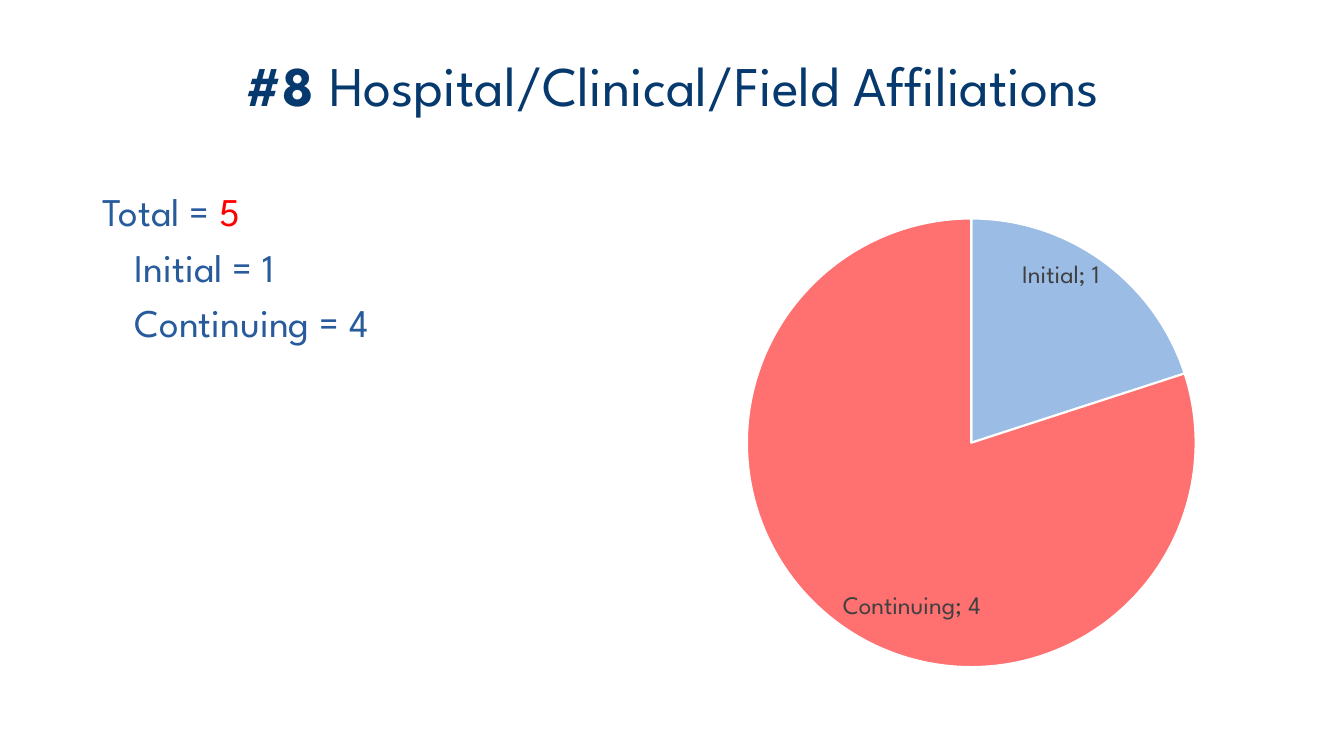
import pptx
import pptx.util
import pptx.chart.data
import pptx.dml.color
import pptx.enum.chart
import pptx.enum.text
import lxml.etree

Inches = pptx.util.Inches
Pt = pptx.util.Pt
FONT = "League Spartan"
COLORS = {"title": "06396D", "body": "285B9C", "total": "FF0000",
          "Initial": "9BBCE5", "Continuing": "FF7070",
          "label": "404040", "edge": "FFFFFF"}


def rgb(name):
    return pptx.dml.color.RGBColor.from_string(COLORS[name])


def add_run(p, text, size=28, color="body", bold=False):
    r = p.add_run()
    r.text = text
    r.font.name = FONT
    r.font.size = Pt(size)
    r.font.bold = bold
    r.font.color.rgb = rgb(color)


def add_text_frame(s, x, y, w, h):
    sp = s.shapes.add_textbox(Inches(x), Inches(y), Inches(w), Inches(h))
    tf = sp.text_frame
    tf.word_wrap = True
    return tf


def add_title(s, x, y, w, h):
    tf = add_text_frame(s, x, y, w, h)
    tf.vertical_anchor = pptx.enum.text.MSO_ANCHOR.MIDDLE
    p = tf.paragraphs[0]
    p.alignment = pptx.enum.text.PP_ALIGN.CENTER
    add_run(p, "#8 ", size=40, color="title", bold=True)
    add_run(p, "Hospital/Clinical/Field Affiliations", size=40, color="title")


def add_counts(s, x, y, w, h, counts):
    tf = add_text_frame(s, x, y, w, h)
    p = tf.paragraphs[0]
    p._p.get_or_add_pPr().set("marL", str(Inches(0.25)))
    add_run(p, "Total = ")
    add_run(p, str(sum(counts.values())), color="total")
    for name, value in counts.items():
        p = tf.add_paragraph()
        p._p.get_or_add_pPr().set("marL", str(Inches(0.57)))
        p.space_before = Pt(6)
        add_run(p, f"{name} = {value}")


def set_plot_layout(chart, **fractions):
    ns = "http://schemas.openxmlformats.org/drawingml/2006/chart"
    area = chart.plots[0]._element.getparent()
    for old in area.findall(f"{{{ns}}}layout"):
        area.remove(old)
    layout = lxml.etree.Element(f"{{{ns}}}layout")
    manual = lxml.etree.SubElement(layout, f"{{{ns}}}manualLayout")
    settings = {"layoutTarget": "inner", "xMode": "edge", "yMode": "edge", **fractions}
    for tag, value in settings.items():
        lxml.etree.SubElement(manual, f"{{{ns}}}{tag}").set("val", str(value))
    area.insert(0, layout)


def add_pie(s, x, y, w, h, counts):
    data = pptx.chart.data.CategoryChartData()
    data.categories = list(counts)
    data.add_series("Series 1", list(counts.values()))
    chart = s.shapes.add_chart(pptx.enum.chart.XL_CHART_TYPE.PIE, Inches(x), Inches(y),
                               Inches(w), Inches(h), data).chart
    chart.has_title = False
    chart.has_legend = False
    chart.font.name = FONT
    chart.font.size = Pt(18)
    plot = chart.plots[0]
    plot.vary_by_categories = True
    for i, name in enumerate(counts):
        fmt = plot.series[0].points[i].format
        fmt.fill.solid()
        fmt.fill.fore_color.rgb = rgb(name)
        fmt.line.color.rgb = rgb("edge")
        fmt.line.width = Pt(1.5)
    labels = plot.series[0].data_labels
    labels.show_value = True
    labels.show_category_name = True
    labels.show_percentage = False
    labels.show_legend_key = False
    labels.position = pptx.enum.chart.XL_LABEL_POSITION.INSIDE_END
    labels.font.name = FONT
    labels.font.size = Pt(18)
    labels.font.color.rgb = rgb("label")
    set_plot_layout(chart, x=0.155, y=0.047, w=0.634, h=0.924)


def build_slide(prs):
    s = prs.slides.add_slide(prs.slide_layouts[6])
    counts = {"Initial": 1, "Continuing": 4}
    add_title(s, 0.67, 0.51, 12, 0.64)
    add_counts(s, 0.67, 1.81, 5.92, 4.85, counts)
    add_pie(s, 6.32, 1.94, 7.02, 4.82, counts)


def main():
    prs = pptx.Presentation()
    prs.slide_width = Inches(13.33)
    prs.slide_height = Inches(7.5)
    build_slide(prs)
    prs.save("out.pptx")


if __name__ == "__main__":
    main()
